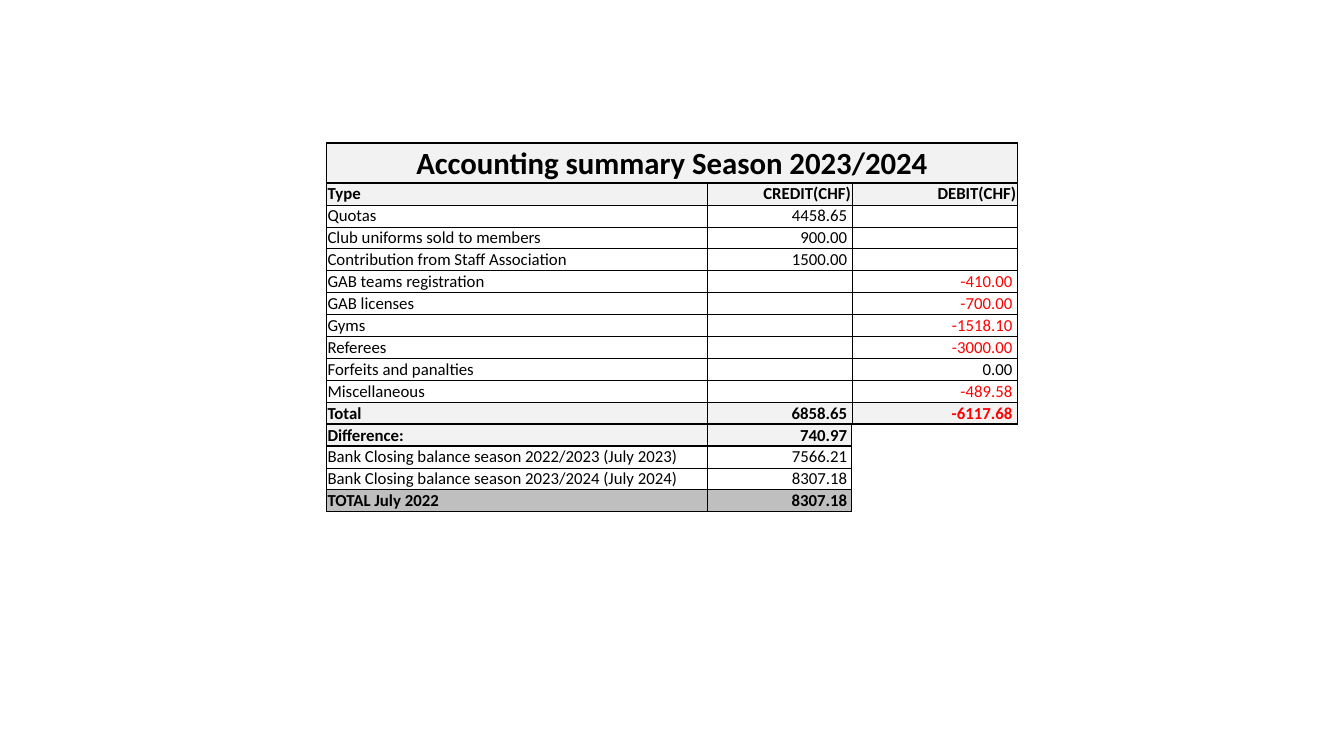
from lxml import etree
from pptx import Presentation
from pptx.dml import color
from pptx.enum import text
from pptx.oxml import ns
from pptx.util import Pt

BLACK, RED, PALE, GREY = "000000", "FF0000", "F2F2F2", "BFBFBF"
THIN, THICK = 0.5, 1
WIDTHS = [272.2, 103, 118.1]
ROWS = [
    ("Accounting summary Season 2023/2024", "", ""),
    ("Type", "CREDIT(CHF)", "DEBIT(CHF)"),
    ("Quotas", "4458.65 ", ""),
    ("Club uniforms sold to members", "900.00 ", ""),
    ("Contribution from Staff Association", "1500.00 ", ""),
    ("GAB teams registration", "", "-410.00 "),
    ("GAB licenses", "", "-700.00 "),
    ("Gyms", "", "-1518.10 "),
    ("Referees", "", "-3000.00 "),
    ("Forfeits and panalties", "", "0.00 "),
    ("Miscellaneous", "", "-489.58 "),
    ("Total", "6858.65 ", "-6117.68 "),
    ("Difference:", "740.97 ", ""),
    ("Bank Closing balance season 2022/2023 (July 2023)", "7566.21 ", ""),
    ("Bank Closing balance season 2023/2024 (July 2024)", "8307.18 ", ""),
    ("TOTAL July 2022", "8307.18 ", ""),
]
TOTAL, LAST = 11, len(ROWS) - 1
FILLS = {0: PALE, 1: PALE, TOTAL: PALE, TOTAL + 1: PALE, LAST: GREY}
RULES = {0, 1, TOTAL, TOTAL + 1, TOTAL + 2, LAST + 1}


def rgb(code):
    return color.RGBColor.from_string(code)


def side(row, line):
    edge = 3 if row <= TOTAL else 2
    if line > edge:
        return 0
    return THICK if line in (0, edge) or row == 0 else THIN


def level(line, col):
    if col == 2 and line > TOTAL + 1:
        return 0
    return THICK if line in RULES else THIN


def border(cell, row, col):
    props = cell._tc.get_or_add_tcPr()
    sizes = {
        "L": side(row, col),
        "R": side(row, 3 if row == 0 else col + 1),
        "T": level(row, col),
        "B": level(row + 1, col),
    }
    for name, size in sizes.items():
        line = etree.SubElement(props, ns.qn("a:ln" + name), w=str(Pt(size)))
        if size:
            fill = etree.SubElement(line, ns.qn("a:solidFill"))
            etree.SubElement(fill, ns.qn("a:srgbClr"), val=BLACK)
        else:
            etree.SubElement(line, ns.qn("a:noFill"))


def paint(cell, row, col):
    border(cell, row, col)
    code = FILLS.get(row) if col < 2 or row <= TOTAL else None
    if code:
        cell.fill.solid()
        cell.fill.fore_color.rgb = rgb(code)
    else:
        cell.fill.background()


def write(cell, row, col):
    words = ROWS[row][col]
    cell.margin_left = cell.margin_right = cell.margin_top = Pt(0.7)
    cell.margin_bottom = 0
    if row == 0:
        cell.vertical_anchor = text.MSO_ANCHOR.MIDDLE
    elif row == TOTAL + 1:
        cell.vertical_anchor = text.MSO_ANCHOR.BOTTOM
    para = cell.text_frame.paragraphs[0]
    if words:
        para.text = words
    align = text.PP_ALIGN
    para.alignment = align.CENTER if row == 0 else align.RIGHT if col else align.LEFT
    font = para.font
    font.name = "Calibri"
    font.size = Pt(22 if row == 0 else 12)
    font.bold = row in FILLS
    font.color.rgb = rgb(RED if words.startswith("-") else BLACK)


def ledger(slide, left, top, width, height):
    frame = slide.shapes.add_table(
        len(ROWS), 3, Pt(left), Pt(top), Pt(width), Pt(height)
    )
    table = frame.table
    table.first_row = table.horz_banding = False
    for col, size in zip(table.columns, WIDTHS):
        col.width = Pt(size * width / sum(WIDTHS))
    head = 28.6
    for num, row in enumerate(table.rows):
        row.height = Pt((height - head) / LAST if num else head)
    for row in range(len(ROWS)):
        for col in range(3):
            cell = table.cell(row, col)
            paint(cell, row, col)
            write(cell, row, col)
    table.cell(0, 0).merge(table.cell(0, 2))


def main():
    deck = Presentation()
    deck.slide_width, deck.slide_height = Pt(960), Pt(540)
    slide = deck.slides.add_slide(deck.slide_layouts[6])
    ledger(slide, 233.3, 102.2, 493.3, 263.6)
    deck.save("out.pptx")


if __name__ == "__main__":
    main()
